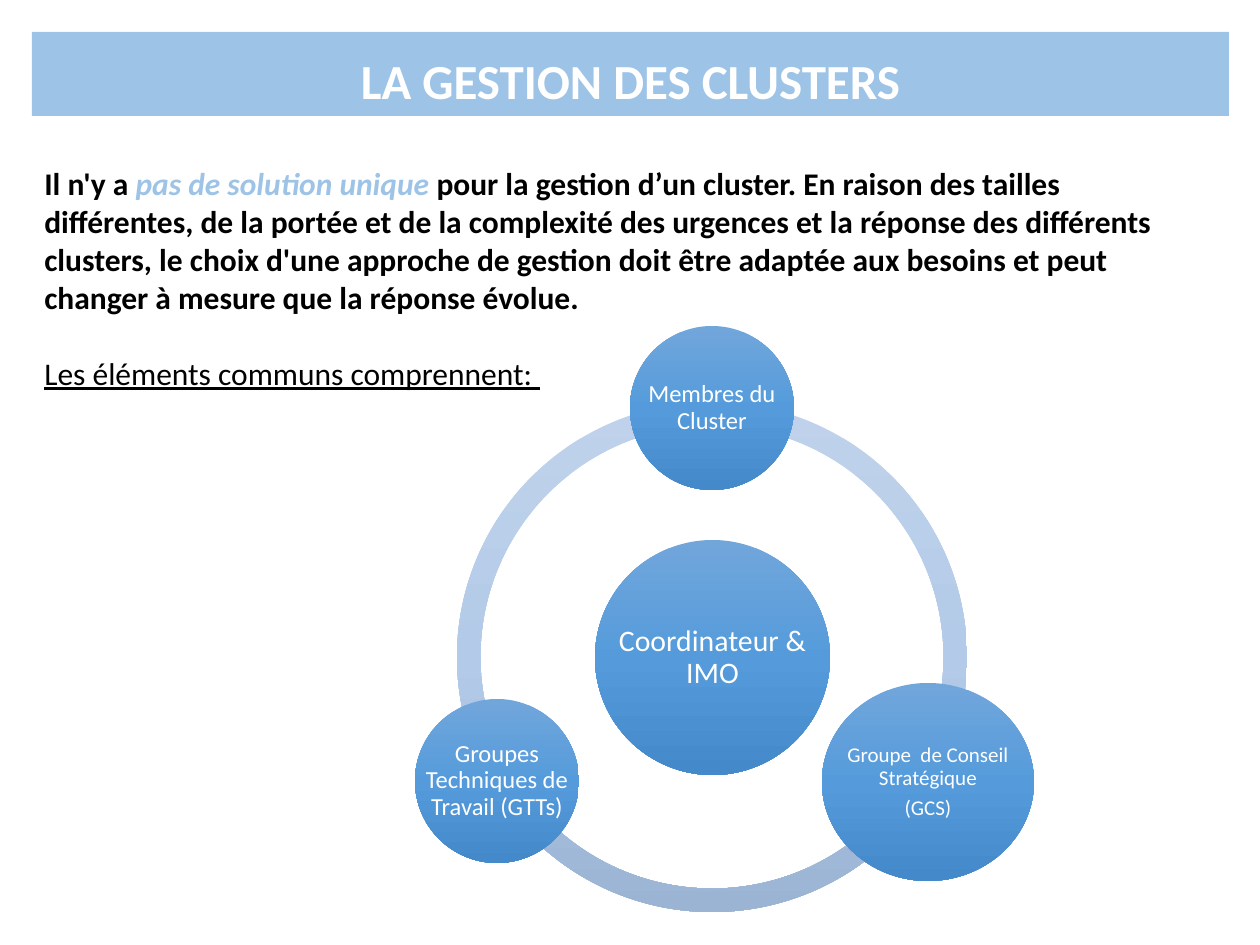
from copy import deepcopy
from pptx import Presentation
from pptx import util as u
from pptx.dml.color import RGBColor
from pptx.enum import shapes, text

SCALE = 914400 / 126
SKY, WHITE, BLACK = "9DC3E6", "FFFFFF", "000000"
RING = ("C0D2EB", "B3CBE9", "9BB4D3")
DISC = ("71A6DB", "559BDB", "448ACA")


def px(*vals):
    return [u.Emu(round(v * SCALE)) for v in vals]


def rgb(code):
    return RGBColor.from_string(code)


class Deck:
    face = "Calibri"

    def __init__(self):
        self.prs = Presentation()
        self.prs.slide_width, self.prs.slide_height = px(1260, 945)
        self.slide = self.prs.slides.add_slide(self.prs.slide_layouts[5])

    def style(self, run, size, color, bold=False, slant=False, line=False):
        font = run.font
        font.name, font.size = self.face, u.Pt(size)
        font.bold, font.italic, font.underline = bold, slant, line
        font.color.rgb = rgb(color)

    def title(self, words, box):
        shape = self.slide.shapes.title
        shape.left, shape.top, shape.width, shape.height = px(*box)
        shape.fill.solid()
        shape.fill.fore_color.rgb = rgb(SKY)
        frame = shape.text_frame
        frame.text = words
        frame.auto_size = text.MSO_AUTO_SIZE.NONE
        frame.vertical_anchor = text.MSO_ANCHOR.BOTTOM
        para = frame.paragraphs[0]
        para.alignment = text.PP_ALIGN.CENTER
        para.line_spacing = 0.9
        self.style(para.runs[0], 28, WHITE, bold=True)

    def frame(self, box):
        frame = self.slide.shapes.add_textbox(*px(*box)).text_frame
        frame.word_wrap = True
        return frame

    def intro(self, parts, lead, box):
        frame = self.frame(box)
        para = frame.paragraphs[0]
        for words, color, slant in parts:
            run = para.add_run()
            run.text = words
            self.style(run, 18, color, bold=True, slant=slant)
        last = frame.add_paragraph()
        last.text = lead
        last.space_before = u.Pt(22)
        self.style(last.runs[0], 18, BLACK, line=True)

    def shade(self, kind, box, colors):
        shape = self.slide.shapes.add_shape(kind, *px(*box))
        shape.shadow.inherit = False
        shape.line.fill.background()
        shape.fill.gradient()
        shape.fill.gradient_angle = 270
        stops = shape._element.spPr.xpath(".//a:gsLst")[0]
        stops.insert(1, deepcopy(stops[0]))
        for i, (stop, color) in enumerate(zip(shape.fill.gradient_stops, colors)):
            stop.position = i / 2
            stop.color.rgb = rgb(color)
        return shape

    def arc(self, start, end, box):
        shape = self.shade(shapes.MSO_SHAPE.BLOCK_ARC, box, RING)
        for i, val in enumerate((start * 0.6, end * 0.6, 0.046)):
            shape.adjustments[i] = val

    def disc(self, words, size, box):
        self.shade(shapes.MSO_SHAPE.OVAL, box, DISC)
        frame = self.frame(box)
        frame.text = words
        frame.vertical_anchor = text.MSO_ANCHOR.MIDDLE
        inset = u.Inches(0.02)
        frame.margin_left = frame.margin_right = inset
        frame.margin_top = frame.margin_bottom = inset
        for para in frame.paragraphs:
            para.alignment = text.PP_ALIGN.CENTER
            para.line_spacing = 0.9
            para.space_after = u.Pt(size * 0.35)
            self.style(para.runs[0], size, WHITE)


def main():
    deck = Deck()
    deck.title("LA GESTION DES CLUSTERS", (32, 32, 1197, 84))
    deck.intro(
        [
            ("Il n'y a ", BLACK, False),
            ("pas de solution unique ", SKY, True),
            ("pour la gestion d’un cluster. En raison des tailles différentes, "
             "de la portée et de la complexité des urgences et la réponse des "
             "différents clusters, le choix d'une approche de gestion doit être "
             "adaptée aux besoins et peut changer à mesure que la réponse évolue.",
             BLACK, False),
        ],
        "Les éléments communs comprennent: ",
        (32, 158, 1197, 280),
    )
    for start, end in ((90, 162), (18, 90), (162, 18)):
        deck.arc(start, end, (457, 402, 510, 510))
    for words, size, box in (
        ("Coordinateur & IMO", 17, (595, 540, 235, 235)),
        ("Membres du Cluster", 14, (630, 326, 164, 164)),
        ("Groupe  de Conseil Stratégique\n(GCS)", 12, (822, 683, 212, 198)),
        ("Groupes Techniques de Travail (GTTs)", 14, (415, 699, 164, 164)),
    ):
        deck.disc(words, size, box)
    deck.prs.save("out.pptx")


if __name__ == "__main__":
    main()
